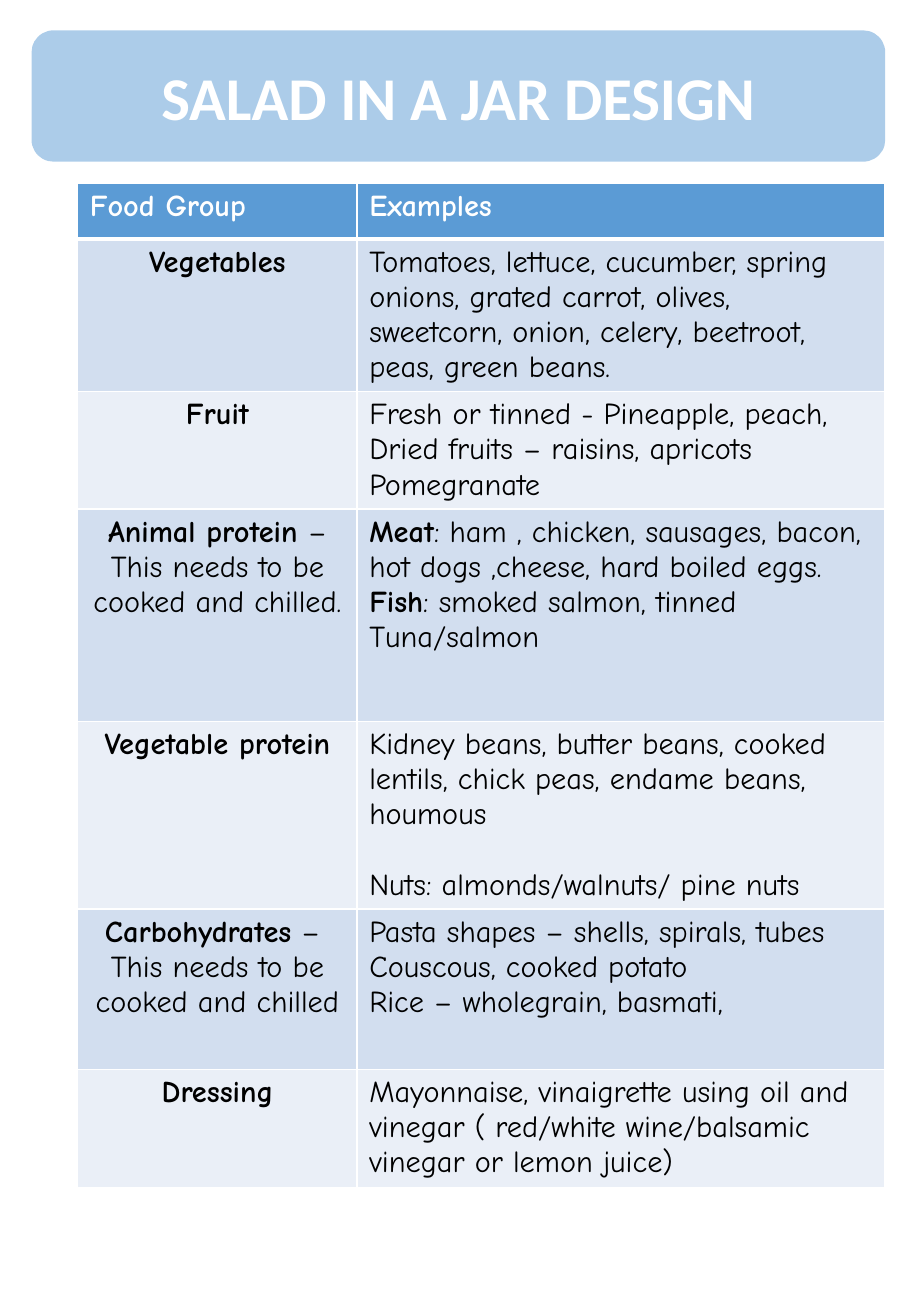
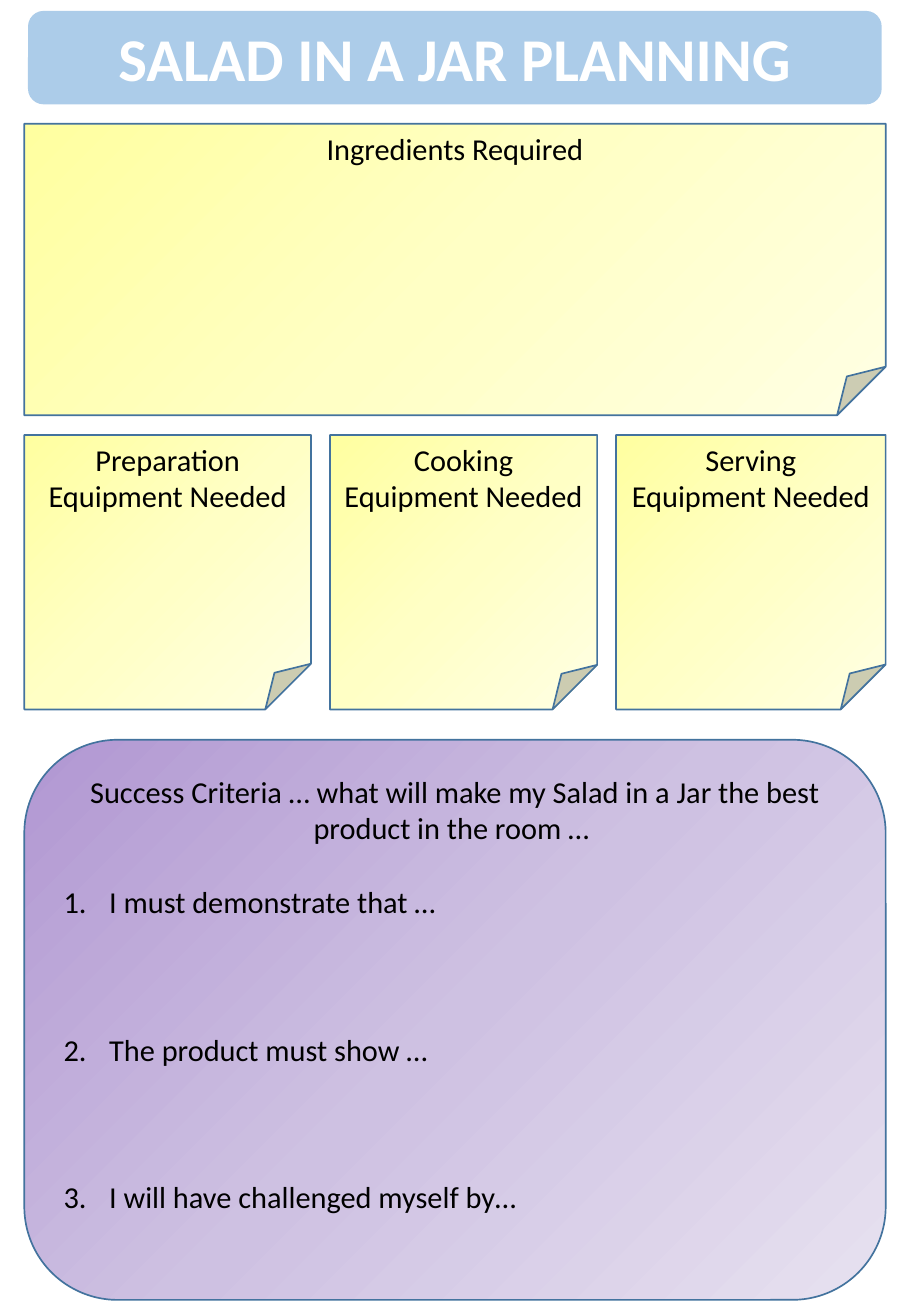
from dataclasses import dataclass

from lxml import etree
from pptx import Presentation, oxml, util as u
from pptx.dml.color import RGBColor
from pptx.enum import shapes, text
from pptx.oxml.ns import nsdecls, qn

KIND = shapes.MSO_SHAPE
MID, TOP = text.MSO_ANCHOR.MIDDLE, text.MSO_ANCHOR.TOP
LEFT, MAIN = text.PP_ALIGN.LEFT, text.PP_ALIGN.CENTER


@dataclass(frozen=True)
class Theme:
    blue: str = "5B9BD5"
    edge: str = "43739E"
    white: str = "FFFFFF"
    black: str = "000000"
    bands: tuple = ("D2DEEF", "EAEFF7")
    note: tuple = ("FFFFA0", "FFFFC5", "FFFFE3")
    goal: tuple = ("B197D2", "CEC1E2", "E7E1F0")
    sans: str = "Calibri"
    comic: str = "Comic Neue"
    head: float = 36
    body: float = 18


T = Theme()


@dataclass(frozen=True)
class Box:
    x: float
    y: float
    w: float
    h: float

    def pts(self) -> list:
        return [u.Pt(v) for v in (self.x, self.y, self.w, self.h)]


@dataclass(frozen=True)
class Style:
    font: str = T.sans
    size: float = T.body
    color: str = T.black
    align: int = MAIN


@dataclass(frozen=True)
class Line:
    words: str
    gap: float = 0
    listed: bool = False


@dataclass(frozen=True)
class Row:
    high: float
    group: tuple
    foods: tuple


def apply(item, values: dict) -> None:
    for name, value in values.items():
        setattr(item, name, value)


def write(frame, lines: tuple, style: Style) -> None:
    for i, line in enumerate(lines):
        line = Line(line) if isinstance(line, str) else line
        para = frame.add_paragraph() if i else frame.paragraphs[0]
        apply(para, {"alignment": LEFT if line.listed else style.align,
                     "space_before": u.Pt(line.gap)})
        if line.listed:
            prop = para._p.get_or_add_pPr()
            prop.set("marL", str(u.Pt(27)))
            prop.set("indent", str(u.Pt(-27)))
            etree.SubElement(prop, qn("a:buAutoNum"), type="arabicPeriod")
        for j, part in enumerate(line.words.split("*")):
            if part:
                run = para.add_run()
                run.text = part
                apply(run.font, {"name": style.font, "size": u.Pt(style.size),
                                 "bold": j % 2 == 1})
                run.font.color.rgb = RGBColor.from_string(style.color)


def panel(slide, kind, box: Box, lines: tuple, style: Style, anchor):
    shape = slide.shapes.add_shape(kind, *box.pts())
    shape.shadow.inherit = False
    apply(shape.text_frame, {"word_wrap": True, "vertical_anchor": anchor})
    write(shape.text_frame, lines, style)
    return shape


def title(slide, box: Box, words: str) -> None:
    style = Style(size=T.head, color=T.white)
    shape = panel(slide, KIND.ROUNDED_RECTANGLE, box, (f"*{words}*",), style, MID)
    shape.fill.solid()
    shape.fill.fore_color.rgb = RGBColor.from_string(T.blue)
    tint = shape._element.spPr.find(".//" + qn("a:srgbClr"))
    etree.SubElement(tint, qn("a:alpha"), val="50000")
    shape.line.fill.background()


def shade(slide, kind, box: Box, lines: tuple, tones: tuple) -> None:
    shape = panel(slide, kind, box, lines, Style(), TOP)
    shape.fill.gradient()
    shape.fill.gradient_angle = 315
    stops = shape._element.spPr.find(".//" + qn("a:gsLst"))
    for stop in list(stops):
        stops.remove(stop)
    for i, tone in enumerate(tones):
        stop = etree.SubElement(stops, qn("a:gs"), pos=str(i * 50000))
        etree.SubElement(stop, qn("a:srgbClr"), val=tone)
    shape.line.color.rgb = RGBColor.from_string(T.edge)
    shape.line.width = u.Pt(1)


def fill(cell, lines: tuple, style: Style, tone: str, base: float) -> None:
    write(cell.text_frame, lines, style)
    cell.fill.solid()
    cell.fill.fore_color.rgb = RGBColor.from_string(tone)
    prop = cell._tc.get_or_add_tcPr()
    for i, (side, wide) in enumerate(zip("LRTB", (1, 1, 1, base))):
        prop.insert(i, oxml.parse_xml(
            f'<a:ln{side} {nsdecls("a")} w="{u.Pt(wide)}"><a:solidFill>'
            f'<a:srgbClr val="{T.white}"/></a:solidFill></a:ln{side}>'))


ROWS = (
    Row(33, ("*Food Group*",), ("*Examples*",)),
    Row(85, ("*Vegetables*",),
        ("Tomatoes, lettuce, cucumber, spring onions, grated carrot, olives, "
         "sweetcorn, onion, celery, beetroot, peas, green beans.",)),
    Row(57, ("*Fruit*",),
        ("Fresh or tinned - Pineapple, peach, Dried fruits – raisins, apricots",
         "Pomegranate")),
    Row(126, ("*Animal protein *–", "This needs to be cooked and chilled."),
        ("*Meat*: ham , chicken, sausages, bacon, hot dogs ,cheese, hard boiled eggs.",
         "*Fish*: smoked salmon, tinned Tuna/salmon")),
    Row(106, ("*Vegetable protein*",),
        ("Kidney beans, butter beans, cooked lentils, chick peas, endame beans,",
         "houmous", Line("Nuts: almonds/walnuts/ pine nuts", gap=20.8))),
    Row(95, ("*Carbohydrates* – ", "This needs to be cooked and chilled"),
        ("Pasta shapes – shells, spirals, tubes", "Couscous, cooked potato",
         "Rice – wholegrain, basmati,")),
    Row(70.5, ("*Dressing*",),
        ("Mayonnaise, vinaigrette using oil and vinegar "
         "( red/white wine/balsamic vinegar or lemon juice)",)),
)


def foods(slide) -> None:
    title(slide, Box(18.7, 18, 506, 77.8), "SALAD IN A JAR DESIGN")
    box = Box(46.1, 108.7, 478.1, sum(r.high for r in ROWS))
    grid = slide.shapes.add_table(len(ROWS), 2, *box.pts()).table
    apply(grid, {"first_row": False, "horz_banding": False})
    for col, wide in zip(grid.columns, (165.6, 312.5)):
        col.width = u.Pt(wide)
    for i, row in enumerate(ROWS):
        grid.rows[i].height = u.Pt(row.high)
        tone = T.bands[(i - 1) % 2] if i else T.blue
        ink = T.black if i else T.white
        for j, lines in enumerate((row.group, row.foods)):
            side = MAIN if i and not j else LEFT
            style = Style(font=T.comic, color=ink, align=side)
            fill(grid.cell(i, j), lines, style, tone, 1 if i else 3)


def plan(slide) -> None:
    left, wide, gap = 14.4, 510.6, 11.2
    title(slide, Box(16.6, 6.5, 506, 55.4), "SALAD IN A JAR PLANNING")
    shade(slide, KIND.FOLDED_CORNER, Box(left, 73.4, wide, 172.8),
          ("Ingredients Required",), T.note)
    x = left
    for stage, w in (("Preparation", 170), ("Cooking", 158.4), ("Serving", 159.8)):
        shade(slide, KIND.FOLDED_CORNER, Box(x, 257.8, w, 162.7),
              (stage, "Equipment Needed"), T.note)
        x += w + gap
    shade(slide, KIND.ROUNDED_RECTANGLE, Box(left, 438.5, wide, 332),
          ("Success Criteria … what will make my Salad in a Jar the best "
           "product in the room … ",
           Line("I must demonstrate that …", 22, True),
           Line("The product must show …", 66, True),
           Line("I will have challenged myself by…", 66, True)), T.goal)


def main() -> None:
    deck = Presentation()
    apply(deck, {"slide_width": u.Pt(540), "slide_height": u.Pt(780)})
    for draw in (foods, plan):
        draw(deck.slides.add_slide(deck.slide_layouts[6]))
    deck.save("out.pptx")


if __name__ == "__main__":
    main()
